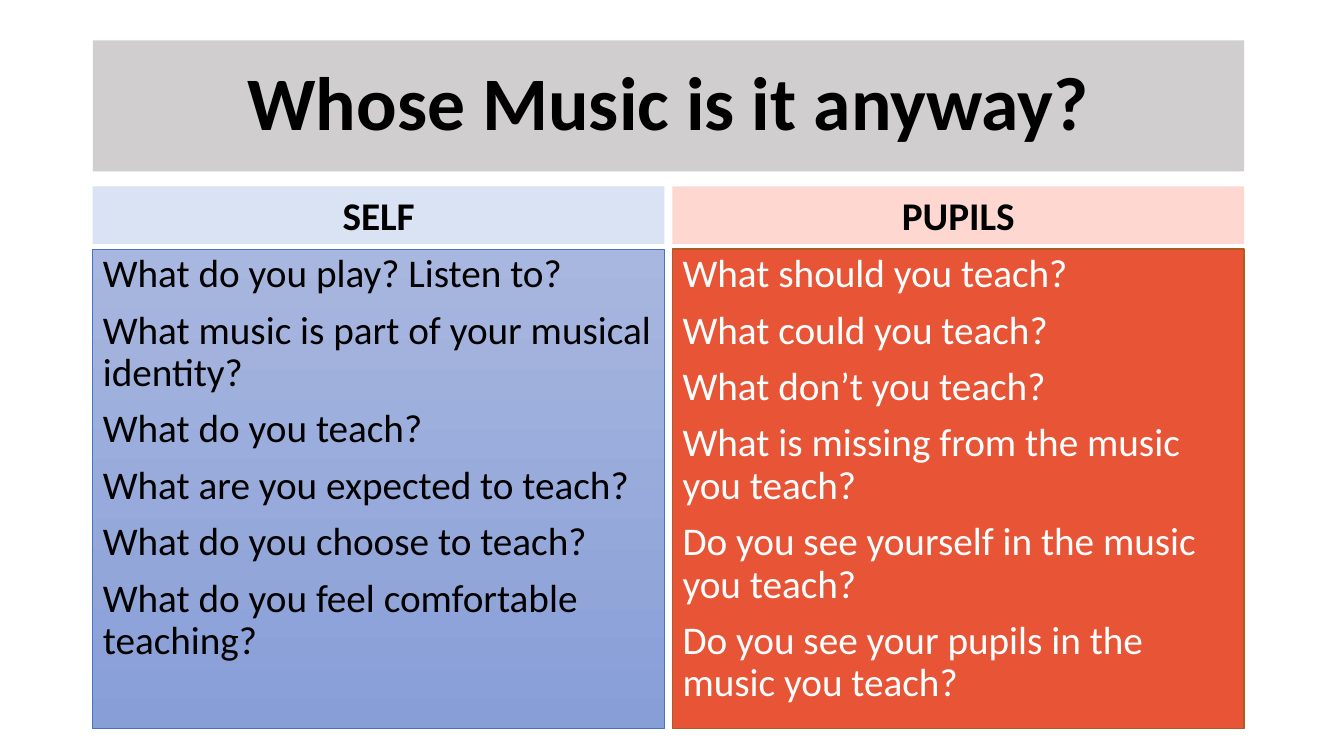
from pptx import Presentation
from pptx.dml.color import RGBColor
from pptx.enum import shapes, text
from pptx.oxml.ns import qn
from pptx.util import Inches, Pt

# Content
TITLE = "Whose Music is it anyway?"
COLUMNS = [
    dict(head="SELF", head_fill="DAE3F3", fill=("A8B7DF", "889ED7"),
         line="4472C4", line_width=0.5, color="000000", questions=[
             "What do you play? Listen to?",
             "What music is part of your musical identity?",
             "What do you teach?",
             "What are you expected to teach?",
             "What do you choose to teach?",
             "What do you feel comfortable teaching?"]),
    dict(head="PUPILS", head_fill="FED8D0", fill=("E85436",),
         line="AF5C24", line_width=1, color="FFFFFF", questions=[
             "What should you teach?",
             "What could you teach?",
             "What don’t you teach?",
             "What is missing from the music you teach?",
             "Do you see yourself in the music you teach?",
             "Do you see your pupils in the music you teach?"]),
]

# Layout in inches
LEFT, WIDTH, GAP = 0.92, 11.42, 0.08
COL_W = (WIDTH - GAP) / 2
TITLE_Y, TITLE_H = 0.4, 1.3
HEAD_Y, HEAD_H = 1.85, 0.57
BODY_Y, BODY_H = 2.47, 4.76


def rgb(color):
    return RGBColor.from_string(color)


def place(sp, x, y, w, h):
    sp.left, sp.top, sp.width, sp.height = map(Inches, (x, y, w, h))


def paint(sp, *colors):
    """Fill with one colour, or with a gradient from top to bottom."""
    if len(colors) == 1:
        sp.fill.solid()
        sp.fill.fore_color.rgb = rgb(colors[0])
        return
    sp.fill.gradient()
    sp.fill.gradient_angle = 270
    for stop, color, position in zip(sp.fill.gradient_stops, colors, (0, 1)):
        stop.color.rgb = rgb(color)
        stop.position = position


def write(sp, lines, size, color, bold=False, align=None, spacing=1, before=0,
          anchor=text.MSO_ANCHOR.TOP):
    tf = sp.text_frame
    tf.text = "\n".join(lines)
    tf.word_wrap = True
    tf.auto_size = text.MSO_AUTO_SIZE.NONE
    tf.vertical_anchor = anchor
    for p in tf.paragraphs:
        p.alignment = align
        p.line_spacing = spacing
        p.space_before = Pt(before)
        p.font.name, p.font.size, p.font.bold = "Calibri", Pt(size), bold
        p.font.color.rgb = rgb(color)


def remove_bullets(sp):
    for p in sp.text_frame.paragraphs:
        pPr = p._p.get_or_add_pPr()
        pPr.set("marL", "0")
        pPr.set("indent", "0")
        bullet = pPr.makeelement(qn("a:buNone"), {})
        pPr.insert_element_before(bullet, "a:tabLst", "a:defRPr", "a:extLst")


prs = Presentation()
prs.slide_width, prs.slide_height = Inches(13.33), Inches(7.5)
s = prs.slides.add_slide(prs.slide_layouts.get_by_name("Two Content"))
title, *bodies = list(s.placeholders)[:3]
CENTER, MIDDLE = text.PP_ALIGN.CENTER, text.MSO_ANCHOR.MIDDLE

# Title band
place(title, LEFT, TITLE_Y, WIDTH, TITLE_H)
paint(title, "D0CECE")
write(title, [TITLE], 54, "000000", True, CENTER, 0.9, anchor=MIDDLE)

# Columns: question list and heading
for i, (col, body) in enumerate(zip(COLUMNS, bodies)):
    x = LEFT + i * (COL_W + GAP)
    place(body, x, BODY_Y, COL_W, BODY_H)
    paint(body, *col["fill"])
    body.line.color.rgb = rgb(col["line"])
    body.line.width = Pt(col["line_width"])
    write(body, col["questions"], 28, col["color"], spacing=0.9, before=10)
    remove_bullets(body)

    head = s.shapes.add_shape(shapes.MSO_SHAPE.RECTANGLE, 0, 0, 0, 0)
    place(head, x, HEAD_Y, COL_W, HEAD_H)
    paint(head, col["head_fill"])
    head.line.fill.background()
    head.shadow.inherit = False
    write(head, [col["head"]], 28, "000000", True, CENTER)

prs.save("out.pptx")
